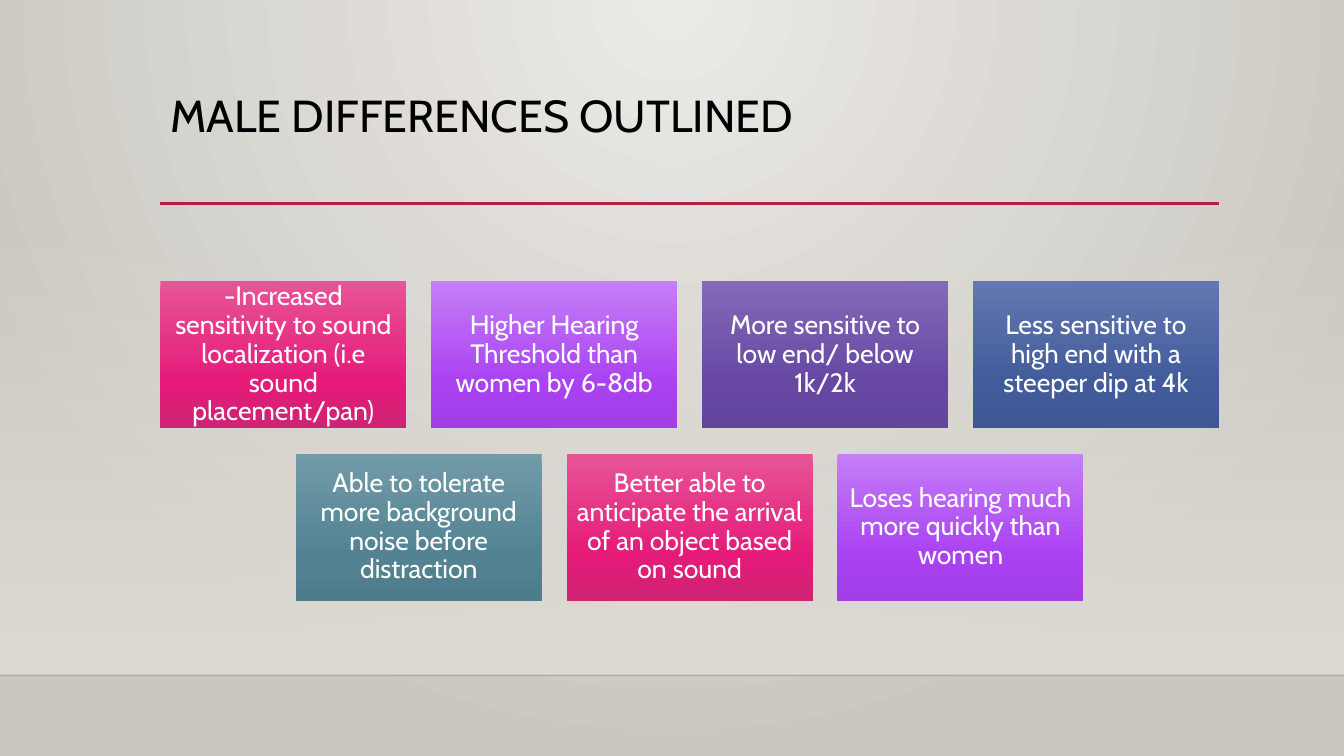
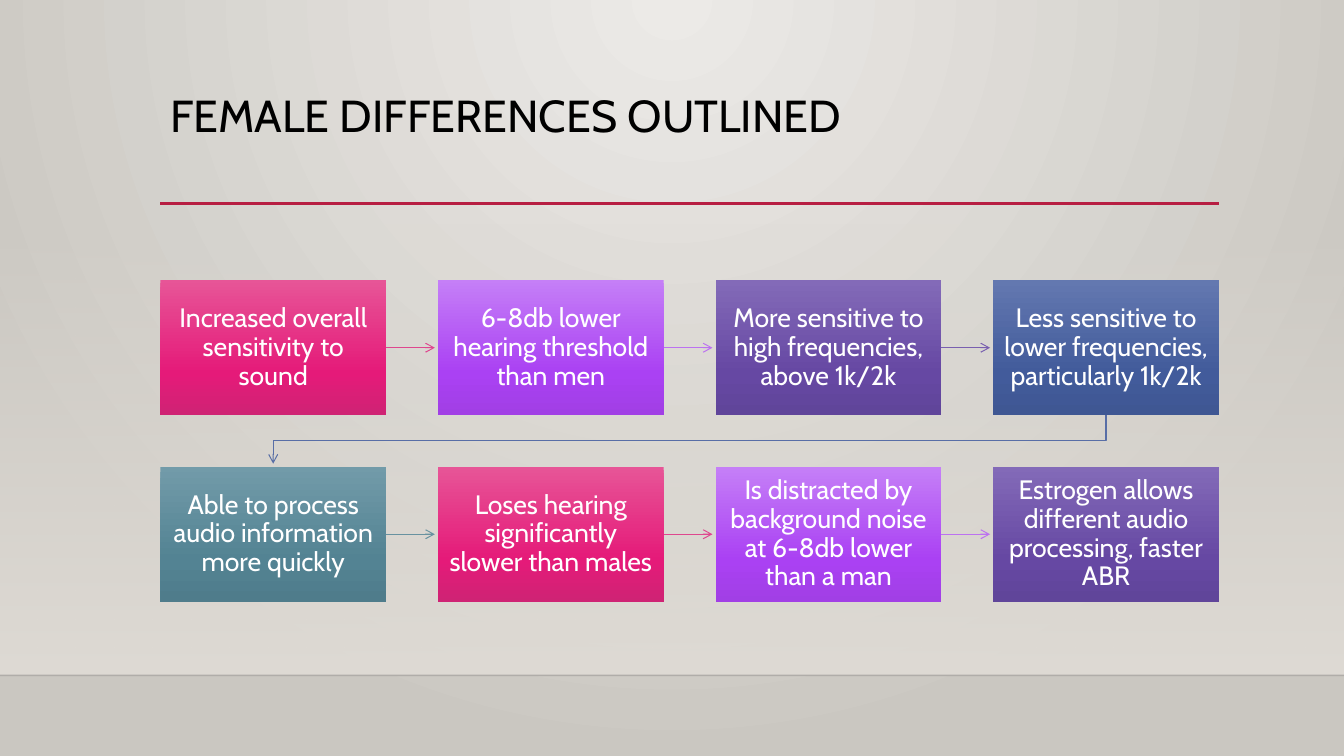
"""Build two slides that outline male and female hearing differences."""
from lxml import etree
from pptx import Presentation
from pptx import util as u
from pptx.dml.color import RGBColor
from pptx.enum import shapes, text
from pptx.oxml import ns

FONT = "Cabin"
LEFT, CONTENT_WIDTH, COLUMNS = 1.59, 10.5, 4
SLIDE_WIDTH, SLIDE_HEIGHT = 13.33, 7.5
FLOOR_TOP = 6.7
DOWNWARD = '<a:lin ang="5400000" scaled="0"/>'
RADIAL = '<a:path path="circle"><a:fillToRect l="43000" t="0" r="43000" b="100000"/></a:path>'
BACKDROP = [(0, "ECEAE7", 100), (100, "CAC7C1", 100)]
WALL_GLOW = [(0, "DFDBD5", 0), (100, "DFDBD5", 100)]
BOX_COLOURS = [
    ("E75597", "E51A79", "CF2374"),
    ("C57FF7", "AA41F3", "A13FE5"),
    ("836AB8", "6648A3", "60459A"),
    ("6378B0", "425B9B", "3F5793"),
    ("729BA9", "538393", "4F7C8B"),
]
ARROW_COLOURS = ["DE478E", "BC72F0", "795FAF", "586EA6", "6892A0"]

SLIDES = [
    {
        "title": "MALE DIFFERENCES OUTLINED",
        "top": 2.79, "width": 2.44, "height": 1.46, "row_step": 1.71,
        "insets": (0.08, 0.08), "arrows": False,
        "boxes": [
            "-Increased sensitivity to sound localization (i.e sound placement/pan)",
            "Higher Hearing Threshold than women by 6-8db",
            "More sensitive to low end/ below 1k/2k",
            "Less sensitive to high end with a steeper dip at 4k",
            "Able to tolerate more background noise before distraction",
            "Better able to anticipate the arrival of an object based on sound",
            "Loses hearing much more quickly than women",
        ],
    },
    {
        "title": "FEMALE DIFFERENCES OUTLINED",
        "top": 2.78, "width": 2.24, "height": 1.34, "row_step": 1.85,
        "insets": (0.11, 0.12), "arrows": True,
        "boxes": [
            "Increased overall sensitivity to sound",
            "6-8db lower hearing threshold than men",
            "More sensitive to high frequencies, above 1k/2k",
            "Less sensitive to lower frequencies, particularly 1k/2k",
            "Able to process audio information more quickly",
            "Loses hearing significantly slower than males",
            "Is distracted by background noise at 6-8db lower than a man",
            "Estrogen allows different audio processing, faster ABR",
        ],
    },
]


def paint_gradient(owner, fill, stops, direction=DOWNWARD):
    fill.solid()
    stop_xml = "".join(
        f'<a:gs pos="{position * 1000}"><a:srgbClr val="{colour}">'
        f'<a:alpha val="{opacity * 1000}"/></a:srgbClr></a:gs>'
        for position, colour, opacity in stops
    )
    gradient = etree.fromstring(
        f'<a:gradFill {ns.nsdecls("a")} rotWithShape="1">'
        f"<a:gsLst>{stop_xml}</a:gsLst>{direction}</a:gradFill>"
    )
    solid = next(owner.iter(ns.qn("a:solidFill")))
    solid.getparent().replace(solid, gradient)


def write_text(shape, words, *, size, colour, align, anchor, insets):
    frame = shape.text_frame
    frame.word_wrap = True
    frame.vertical_anchor = anchor
    frame.margin_left = frame.margin_right = u.Inches(insets[0])
    frame.margin_top = frame.margin_bottom = u.Inches(insets[1])
    paragraph = frame.paragraphs[0]
    paragraph.text = words
    paragraph.alignment = align
    paragraph.line_spacing = 0.9
    paragraph.font.name = FONT
    paragraph.font.size = u.Pt(size)
    paragraph.font.color.rgb = RGBColor.from_string(colour)


presentation = Presentation()
presentation.slide_width = u.Inches(SLIDE_WIDTH)
presentation.slide_height = u.Inches(SLIDE_HEIGHT)

for content in SLIDES:
    slide = presentation.slides.add_slide(presentation.slide_layouts[6])
    paint_gradient(slide.element, slide.background.fill, BACKDROP, RADIAL)

    wall = slide.shapes.add_shape(
        shapes.MSO_SHAPE.RECTANGLE, 0, u.Inches(2.21), u.Inches(SLIDE_WIDTH), u.Inches(4.49)
    )
    wall.shadow.inherit = False
    wall.line.fill.background()
    paint_gradient(wall.element.spPr, wall.fill, WALL_GLOW)

    title = slide.shapes.add_textbox(
        u.Inches(LEFT), u.Inches(0.88), u.Inches(CONTENT_WIDTH), u.Inches(1.15)
    )
    write_text(
        title, content["title"], size=32, colour="000000", align=text.PP_ALIGN.LEFT,
        anchor=text.MSO_ANCHOR.TOP, insets=(0.1, 0.05),
    )

    lines = [
        ([(0, FLOOR_TOP), (SLIDE_WIDTH, FLOOR_TOP)], "000001", 1, 20, False),
        ([(LEFT, 2.02), (LEFT + CONTENT_WIDTH, 2.02)], "B71E42", 2.5, 100, False),
    ]
    width, height = content["width"], content["height"]
    column_step = (CONTENT_WIDTH - width) / (COLUMNS - 1)
    count = len(content["boxes"])
    for index, words in enumerate(content["boxes"]):
        row, column = divmod(index, COLUMNS)
        row_count = min(COLUMNS, count - row * COLUMNS)
        indent = (COLUMNS - row_count) * column_step / 2
        x = LEFT + indent + column * column_step
        y = content["top"] + row * content["row_step"]
        box = slide.shapes.add_shape(
            shapes.MSO_SHAPE.RECTANGLE,
            u.Inches(x), u.Inches(y), u.Inches(width), u.Inches(height),
        )
        box.shadow.inherit = False
        box.line.fill.background()
        stops = zip((0, 69, 100), BOX_COLOURS[index % len(BOX_COLOURS)], (100, 100, 100))
        paint_gradient(box.element.spPr, box.fill, stops)
        write_text(
            box, words, size=19, colour="FFFFFF", align=text.PP_ALIGN.CENTER,
            anchor=text.MSO_ANCHOR.MIDDLE, insets=content["insets"],
        )

        if content["arrows"] and index < count - 1:
            if column < COLUMNS - 1:
                middle = y + height / 2
                points = [(x + width, middle), (x + column_step - 0.03, middle)]
            else:
                start, end = x + width / 2, LEFT + width / 2
                bottom, next_top = y + height, y + content["row_step"]
                turn = (bottom + next_top) / 2
                points = [(start, bottom), (start, turn), (end, turn), (end, next_top - 0.03)]
            colour = ARROW_COLOURS[index % len(ARROW_COLOURS)]
            lines.append((points, colour, 0.75, 100, True))

    for points, colour, weight, opacity, has_arrow in lines:
        corners = [(u.Inches(x), u.Inches(y)) for x, y in points]
        if len(corners) == 2:
            stroke = slide.shapes.add_connector(
                shapes.MSO_CONNECTOR.STRAIGHT, *corners[0], *corners[1]
            )
        else:
            builder = slide.shapes.build_freeform(*corners[0])
            builder.add_line_segments(corners[1:], close=False)
            stroke = builder.convert_to_shape()
            stroke.fill.background()
        stroke.line.color.rgb = RGBColor.from_string(colour)
        stroke.line.width = u.Pt(weight)
        properties = stroke.element.spPr
        outline = properties.find(ns.qn("a:ln"))
        if opacity < 100:
            tint = next(outline.iter(ns.qn("a:srgbClr")))
            etree.SubElement(tint, ns.qn("a:alpha"), val=str(opacity * 1000))
        if has_arrow:
            etree.SubElement(outline, ns.qn("a:tailEnd"), type="arrow")
        etree.SubElement(properties, ns.qn("a:effectLst"))

presentation.save("out.pptx")
